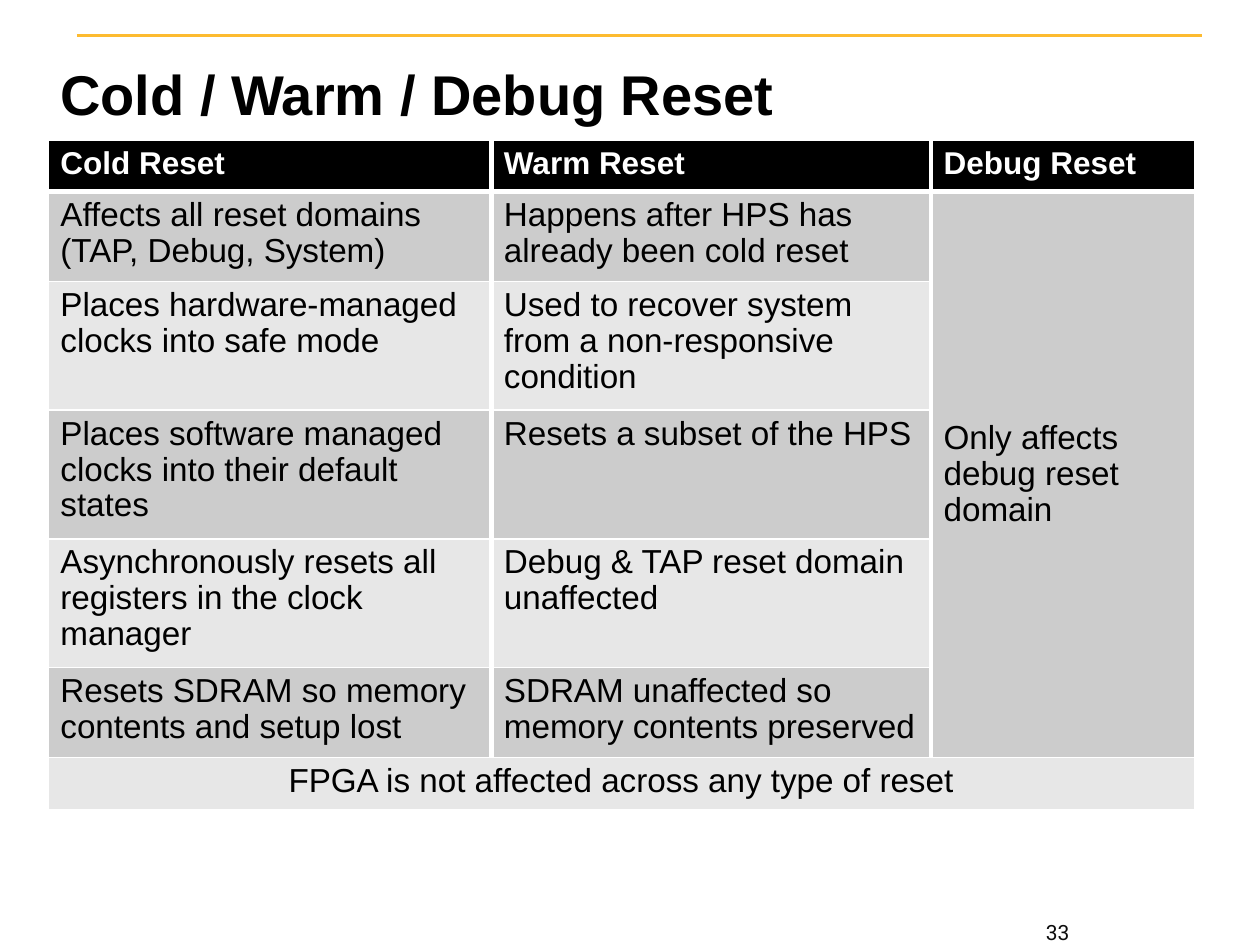
import pptx
import pptx.dml.color
import pptx.enum.shapes
import pptx.enum.text
import pptx.oxml.ns
import pptx.util
from lxml import etree

Inches = pptx.util.Inches
Pt = pptx.util.Pt
ALIGN = pptx.enum.text.PP_ALIGN
ANCHOR = pptx.enum.text.MSO_ANCHOR

# Content
TITLE = "Cold / Warm / Debug Reset"
PAGE_NUMBER = "33"
HEADERS = ["Cold Reset", "Warm Reset", "Debug Reset"]
ROWS = [
    ["Affects all reset domains (TAP, Debug, System)",
     "Happens after HPS has already been cold reset",
     "Only affects debug reset domain"],
    ["Places hardware-managed clocks into safe mode",
     "Used to recover system from a non-responsive condition", ""],
    ["Places software managed clocks into their default states",
     "Resets a subset of the HPS", ""],
    ["Asynchronously resets all registers in the clock manager",
     "Debug & TAP reset domain unaffected", ""],
    ["Resets SDRAM so memory contents and setup lost",
     "SDRAM unaffected so memory contents preserved", ""],
    ["FPGA is not affected across any type of reset", "", ""],
]

THEME = {
    "font": "Arial", "number_font": "Roboto",
    "text": "000000", "inverse": "FFFFFF", "number": "0D0D0D",
    "rule": "FDBB30", "header": "000000", "border": "FFFFFF",
    "bands": ["CCCCCC", "E7E7E7"],
    "title_size": 32, "header_size": 18, "body_size": 19, "number_size": 12,
    "thin": 1, "thick": 3, "rule_width": 2,
}

# Layout in inches
LEFT, TITLE_TOP, TABLE_TOP, WIDTH = 0.38, 0.37, 1.11, 9.11
TABLE_HEIGHT, ROW_HEIGHT = 5.44, 0.41
COLUMN_WIDTHS = [3.52, 3.49, 2.09]


def rgb(value):
    return pptx.dml.color.RGBColor.from_string(value)


def write_text(frame, text, size, color=THEME["text"], font=THEME["font"],
               bold=False, align=ALIGN.LEFT, spacing=None):
    frame.word_wrap = True
    paragraph = frame.paragraphs[0]
    paragraph.alignment = align
    if spacing:
        paragraph.line_spacing = spacing
    run = paragraph.add_run()
    run.text = text
    run.font.name = font
    run.font.size = Pt(size)
    run.font.bold = bold
    run.font.color.rgb = rgb(color)


def add_text_box(slide, text, left, top, width, height, **text_format):
    box = slide.shapes.add_textbox(*map(Inches, (left, top, width, height)))
    box.text_frame.vertical_anchor = ANCHOR.MIDDLE
    write_text(box.text_frame, text, **text_format)


def set_borders(cell, widths):
    properties = cell._tc.get_or_add_tcPr()
    qn = pptx.oxml.ns.qn
    for side, width in widths.items():
        line = etree.SubElement(properties, qn(f"a:ln{side}"), w=str(Pt(width)))
        fill = etree.SubElement(line, qn("a:solidFill"))
        etree.SubElement(fill, qn("a:srgbClr"), val=THEME["border"])


def add_rule(slide):
    rule = slide.shapes.add_connector(
        pptx.enum.shapes.MSO_CONNECTOR.STRAIGHT,
        Inches(0.61), Inches(0.28), Inches(9.54), Inches(0.28))
    rule.line.color.rgb = rgb(THEME["rule"])
    rule.line.width = Pt(THEME["rule_width"])
    etree.SubElement(rule._element.spPr, pptx.oxml.ns.qn("a:effectLst"))


def add_reset_table(slide):
    content = [HEADERS] + ROWS
    last_row, last_column = len(content) - 1, len(HEADERS) - 1
    frame = slide.shapes.add_table(
        len(content), len(HEADERS), Inches(LEFT), Inches(TABLE_TOP),
        Inches(WIDTH), Inches(TABLE_HEIGHT))
    table = frame.table
    table.horz_banding = False
    for column, width in zip(table.columns, COLUMN_WIDTHS):
        column.width = Inches(width)
    for row in table.rows:
        row.height = Inches(ROW_HEIGHT)
    frame.height = Inches(TABLE_HEIGHT)

    # Merged areas: the debug column and the closing line
    table.cell(1, last_column).merge(table.cell(last_row - 1, last_column))
    table.cell(last_row, 0).merge(table.cell(last_row, last_column))
    table.cell(1, last_column).vertical_anchor = ANCHOR.MIDDLE

    thin, thick = THEME["thin"], THEME["thick"]
    for r, texts in enumerate(content):
        header, closing = r == 0, r == last_row
        for c, text in enumerate(texts):
            cell = table.cell(r, c)
            set_borders(cell, {
                "L": thick if c > 0 and not closing else thin,
                "R": thick if c < last_column and not closing else thin,
                "T": thick if r == 1 else thin,
                "B": thick if header else thin,
            })
            band = 0 if c == last_column and not closing else (r - 1) % 2
            cell.fill.solid()
            cell.fill.fore_color.rgb = rgb(
                THEME["header"] if header else THEME["bands"][band])
            if text:
                write_text(
                    cell.text_frame, text,
                    size=THEME["header_size" if header else "body_size"],
                    color=THEME["inverse" if header else "text"],
                    bold=header, spacing=None if header else 0.97,
                    align=ALIGN.CENTER if closing else ALIGN.LEFT)


def main():
    presentation = pptx.Presentation()
    presentation.slide_width = Inches(10)
    presentation.slide_height = Inches(7.5)
    slide = presentation.slides.add_slide(presentation.slide_layouts[6])

    add_text_box(slide, PAGE_NUMBER, 7.55, 7.3, 1.69, 0.2,
                 size=THEME["number_size"], color=THEME["number"],
                 font=THEME["number_font"], align=ALIGN.CENTER)
    add_rule(slide)
    add_text_box(slide, TITLE, LEFT, TITLE_TOP, WIDTH, TABLE_TOP - TITLE_TOP,
                 size=THEME["title_size"], bold=True)
    add_reset_table(slide)
    presentation.save("out.pptx")


if __name__ == "__main__":
    main()
